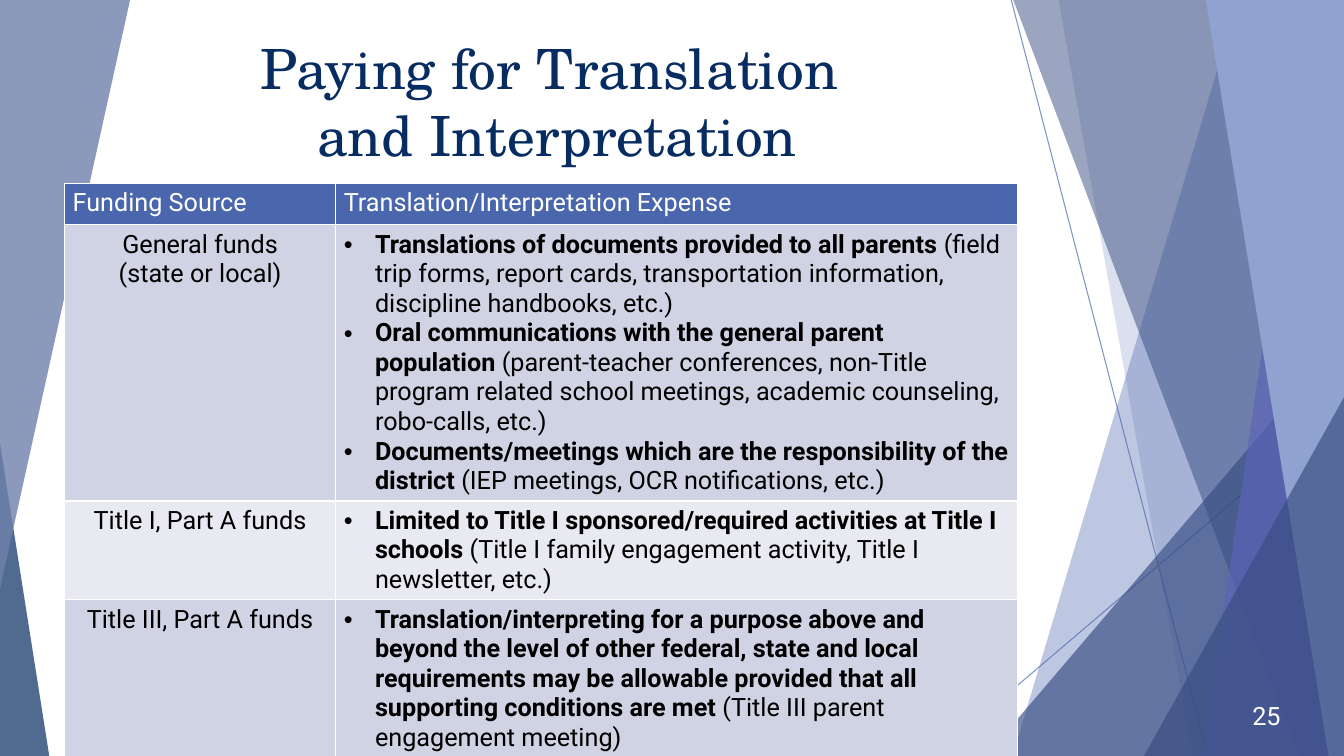
from dataclasses import dataclass

from lxml import etree
from pptx import Presentation
from pptx import util as u
from pptx.dml.color import RGBColor
from pptx.enum import shapes as kinds, text
from pptx.oxml.ns import qn

PX = 9144  # EMU per px, 100 px to the inch


@dataclass(frozen=True)
class Theme:
    navy: str = "072C62"
    blue: str = "4A66AC"
    deep: str = "384C81"
    violet: str = "5C64B7"
    sky: str = "90A2CF"
    slate: str = "6F81AC"
    white: str = "FFFFFF"
    black: str = "000000"
    bands: tuple = ("D0D3E3", "E9EAF1")
    title_font: str = "TeX Gyre Schola"
    body_font: str = "Roboto"
    title_size: float = 39.6
    body_size: float = 18


theme = Theme()


def format_runs(frame, font, size, color):
    for paragraph in frame.paragraphs:
        for run in paragraph.runs:
            run.font.name = font
            run.font.size = u.Pt(size)
            run.font.color.rgb = RGBColor.from_string(color)


def finish_facet(facet, color, opacity):
    """Fill a background facet without outline or shadow, at a percent opacity."""
    facet.shadow.inherit = False
    facet.fill.solid()
    facet.fill.fore_color.rgb = RGBColor.from_string(color)
    facet.line.fill.background()
    for tone in facet.element.spPr.iter(qn("a:srgbClr")):
        etree.SubElement(tone, qn("a:alpha"), val=str(opacity * 1000))


deck = Presentation()
deck.slide_width, deck.slide_height = 1333 * PX, 750 * PX
slide = deck.slides.add_slide(deck.slide_layouts[5])

# Thin crossing lines
for ends in [(1003, 0, 1198, 750), (1333, 404, 927, 750)]:
    ray = slide.shapes.add_connector(
        kinds.MSO_CONNECTOR.STRAIGHT, *(end * PX for end in ends))
    ray.line.color.rgb = RGBColor.from_string(theme.blue)
    ray.line.width = u.Pt(0.75)
    for tone in ray.element.spPr.iter(qn("a:srgbClr")):
        etree.SubElement(tone, qn("a:alpha"), val="70000")
    etree.SubElement(ray.element.spPr, qn("a:effectLst"))

# Facets from back to front: a band is (top x, bottom x) up to the right edge,
# a triangle is (left, top, width, height, apex position, flipped)
facets = [
    ((1228, 1004), theme.blue, 36),
    ((1050, 1183), theme.blue, 20),
    ((977, 334, 356, 417, 1, False), theme.deep, 66),
    ((1005, 1289), theme.deep, 50),
    ((1303, 1192), theme.violet, 70),
    ((1196, 1318), theme.sky, 100),
    ((1134, 394, 199, 357, 1, False), theme.deep, 66),
    ((0, 440, 49, 311, 0, False), theme.navy, 70),
    ((0, 0, 129, 584, 0, True), theme.slate, 80),
]
for outline, color, opacity in facets:
    if len(outline) == 2:
        top_x, bottom_x = outline
        band = slide.shapes.build_freeform(top_x, 0, scale=PX)
        band.add_line_segments([(1333, 0), (1333, 751), (bottom_x, 751)], close=True)
        facet = band.convert_to_shape()
    else:
        *box, apex, flipped = outline
        facet = slide.shapes.add_shape(
            kinds.MSO_SHAPE.ISOSCELES_TRIANGLE, *(side * PX for side in box))
        facet.adjustments[0] = apex
        if flipped:
            facet.element.spPr.find(qn("a:xfrm")).set("flipV", "1")
    finish_facet(facet, color, opacity)

# Title, brought in front of the facets
title = slide.shapes.title
slide.shapes.element.append(title.element)
title.left, title.top, title.width, title.height = (
    side * PX for side in (61, 28, 983, 144))
title.text_frame.text = "Paying for Translation \vand Interpretation"
title.text_frame.vertical_anchor = text.MSO_ANCHOR.MIDDLE
title.text_frame.auto_size = text.MSO_AUTO_SIZE.NONE
title.text_frame.paragraphs[0].alignment = text.PP_ALIGN.CENTER
format_runs(title.text_frame, theme.title_font, theme.title_size, theme.navy)

# Funding table: each expense is (bold part, plain part)
headings = ["Funding Source", "Translation/Interpretation Expense"]
funding = [
    ("General funds\n(state or local)", [
        ("Translations of documents provided to all parents ",
         "(field trip forms, report cards, transportation information, "
         "discipline handbooks, etc.)"),
        ("Oral communications with the general parent population",
         " (parent-teacher conferences, non-Title program related school "
         "meetings, academic counseling, robo-calls, etc.)"),
        ("Documents/meetings which are the responsibility of the district ",
         "(IEP meetings, OCR notifications, etc.)"),
    ]),
    ("Title I, Part A funds", [
        ("Limited to Title I sponsored/required activities at Title I schools ",
         "(Title I family engagement activity, Title I newsletter, etc.)"),
    ]),
    ("Title III, Part A funds", [
        ("Translation/interpreting for a purpose above and beyond the level of "
         "other federal, state and local requirements may be allowable provided "
         "that all supporting conditions are met ",
         "(Title III parent engagement meeting)"),
    ]),
]
row_height = 41
row_count = len(funding) + 1
table = slide.shapes.add_table(
    row_count, 2, 64 * PX, 182 * PX, 945 * PX, row_count * row_height * PX).table
for column, width in zip(table.columns, (269, 676)):
    column.width = width * PX
for row in table.rows:
    row.height = row_height * PX

for heading, cell in zip(headings, table.rows[0].cells):
    cell.text_frame.text = heading
    cell.text_frame.paragraphs[0].runs[0].font.bold = False

for row_index, (source, expenses) in enumerate(funding, start=1):
    source_frame = table.cell(row_index, 0).text_frame
    source_frame.text = source
    for paragraph in source_frame.paragraphs:
        paragraph.alignment = text.PP_ALIGN.CENTER

    expense_frame = table.cell(row_index, 1).text_frame
    for index, expense in enumerate(expenses):
        item = expense_frame.add_paragraph() if index else expense_frame.paragraphs[0]
        for part, bold in zip(expense, (True, False)):
            run = item.add_run()
            run.text = part
            run.font.bold = bold
        layout = item._p.get_or_add_pPr()
        layout.set("marL", str(31 * PX))
        layout.set("indent", str(-31 * PX))
        etree.SubElement(layout, qn("a:buFont"), typeface="Arial")
        etree.SubElement(layout, qn("a:buChar"), char="•")

for row_index, row in enumerate(table.rows):
    ink = theme.black if row_index else theme.white
    back = theme.bands[(row_index - 1) % 2] if row_index else theme.blue
    for cell in row.cells:
        cell.margin_left = cell.margin_right = 8 * PX
        cell.margin_top = cell.margin_bottom = 5 * PX
        format_runs(cell.text_frame, theme.body_font, theme.body_size, ink)
        for side in ("a:lnL", "a:lnR", "a:lnT", "a:lnB"):
            border = etree.SubElement(
                cell._tc.get_or_add_tcPr(), qn(side), w=str(u.Pt(1)))
            border_fill = etree.SubElement(border, qn("a:solidFill"))
            etree.SubElement(border_fill, qn("a:srgbClr"), val=theme.white)
        cell.fill.solid()
        cell.fill.fore_color.rgb = RGBColor.from_string(back)

# Page number
page = slide.shapes.add_textbox(*(side * PX for side in (1205, 690, 75, 40))).text_frame
page.text = "25"
page.word_wrap = True
page.vertical_anchor = text.MSO_ANCHOR.MIDDLE
page.paragraphs[0].alignment = text.PP_ALIGN.RIGHT
format_runs(page, theme.body_font, theme.body_size, theme.white)

deck.save("out.pptx")
